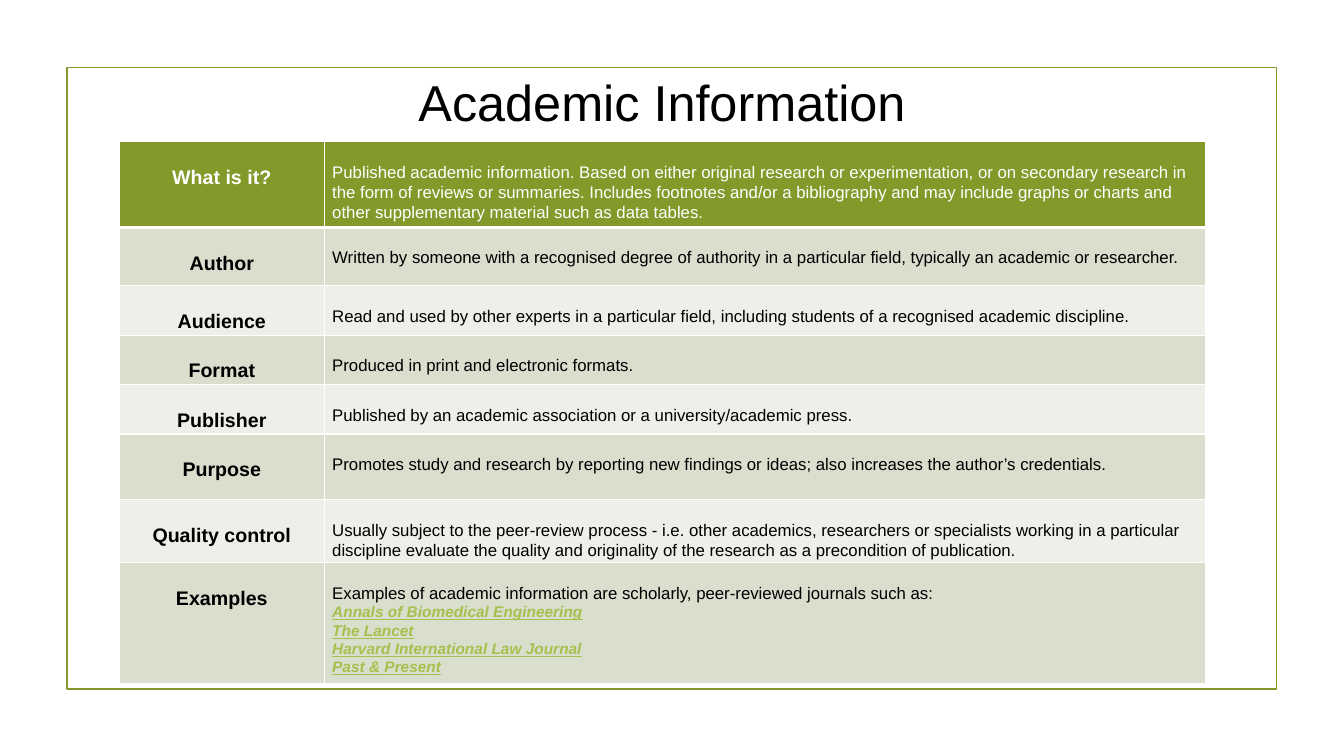
from dataclasses import dataclass

from lxml.etree import SubElement
from pptx import Presentation
from pptx.dml.color import RGBColor
from pptx.enum.shapes import MSO_SHAPE
from pptx.enum.text import MSO_ANCHOR, PP_ALIGN
from pptx.oxml.ns import qn
from pptx.util import Pt


@dataclass(frozen=True)
class Theme:
    font: str = "Arial"
    green: str = "83992A"
    link: str = "A8BF4D"
    bands: tuple = ("EDEFE8", "D9DECD")
    dark: str = "000000"
    light: str = "FFFFFF"
    title: int = 36
    label: int = 14
    body: int = 12
    journal: int = 11


THEME = Theme()

ROWS = [
    (61.2, "What is it?", "Published academic information. Based on either original research or experimentation, or on secondary research in the form of reviews or summaries. Includes footnotes and/or a bibliography and may include graphs or charts and other supplementary material such as data tables."),
    (41.8, "Author", "Written by someone with a recognised degree of authority in a particular field, typically an academic or researcher."),
    (35.3, "Audience", "Read and used by other experts in a particular field, including students of a recognised academic discipline."),
    (35.3, "Format", "Produced in print and electronic formats."),
    (35.3, "Publisher", "Published by an academic association or a university/academic press."),
    (46.8, "Purpose", "Promotes study and research by reporting new findings or ideas; also increases the author’s credentials."),
    (43.9, "Quality control", "Usually subject to the peer-review process - i.e. other academics, researchers or specialists working in a particular discipline evaluate the quality and originality of the research as a precondition of publication."),
    (79.9, "Examples", "Examples of academic information are scholarly, peer-reviewed journals such as:"),
]
JOURNALS = [
    "Annals of Biomedical Engineering",
    "The Lancet",
    "Harvard International Law Journal",
    "Past & Present",
]


def set_attrs(obj, values):
    for name, value in values.items():
        setattr(obj, name, value)


def write(p, text, size, color, align=PP_ALIGN.LEFT, spacing=1.07, **style):
    set_attrs(p, {"alignment": align, "line_spacing": spacing})
    r = p.add_run()
    r.text = text
    set_attrs(r.font, {"name": THEME.font, "size": Pt(size), **style})
    r.font.color.rgb = RGBColor.from_string(color)


def add_frame(s, left, top, width, height):
    sp = s.shapes.add_shape(MSO_SHAPE.RECTANGLE, Pt(left), Pt(top), Pt(width), Pt(height))
    sp.shadow.inherit = False
    sp.fill.background()
    sp.line.color.rgb = RGBColor.from_string(THEME.green)
    sp.line.width = Pt(1.25)


def add_title(s, left, top, width, height):
    sp = s.shapes.add_textbox(Pt(left), Pt(top), Pt(width), Pt(height))
    tf = sp.text_frame
    set_attrs(tf, {"word_wrap": True, "vertical_anchor": MSO_ANCHOR.MIDDLE})
    write(tf.paragraphs[0], "Academic Information", THEME.title, THEME.dark,
          PP_ALIGN.CENTER, 1.0)


def format_cell(cell, fill, top_margin, widths):
    tc_pr = cell._tc.get_or_add_tcPr()
    for side, width in zip("LRTB", widths):
        ln = SubElement(tc_pr, qn(f"a:ln{side}"), w=str(Pt(width)))
        color = SubElement(SubElement(ln, qn("a:solidFill")), qn("a:srgbClr"))
        color.set("val", THEME.light)
    cell.fill.solid()
    cell.fill.fore_color.rgb = RGBColor.from_string(fill)
    set_attrs(cell, {
        "margin_left": Pt(5.4), "margin_right": Pt(5.4),
        "margin_top": Pt(top_margin), "margin_bottom": 0,
        "vertical_anchor": MSO_ANCHOR.TOP,
    })


def add_criteria_table(s, left, top, width, label_width):
    height = sum(row[0] for row in ROWS)
    table = s.shapes.add_table(len(ROWS), 2, Pt(left), Pt(top), Pt(width), Pt(height)).table
    table.columns[0].width = Pt(label_width)
    table.columns[1].width = Pt(width - label_width)
    for i, (row_height, label, body) in enumerate(ROWS):
        table.rows[i].height = Pt(row_height)
        fill = THEME.bands[i % 2] if i else THEME.green
        color = THEME.dark if i else THEME.light
        widths = (1, 1, 3 if i == 1 else 1, 1 if i else 3)
        name_cell, body_cell = table.cell(i, 0), table.cell(i, 1)
        format_cell(name_cell, fill, 16.7, widths)
        format_cell(body_cell, fill, 14.3, widths)
        write(name_cell.text_frame.paragraphs[0], label, THEME.label, color,
              PP_ALIGN.CENTER, bold=True)
        write(body_cell.text_frame.paragraphs[0], body, THEME.body, color, bold=False)
    for journal in JOURNALS:
        write(body_cell.text_frame.add_paragraph(), journal, THEME.journal, THEME.link,
              bold=True, italic=True, underline=True)


def main():
    prs = Presentation()
    set_attrs(prs, {"slide_width": Pt(960), "slide_height": Pt(540)})
    s = prs.slides.add_slide(prs.slide_layouts[6])
    add_frame(s, 47.8, 48.2, 864, 444)
    add_title(s, 95, 43.2, 756, 59)
    add_criteria_table(s, 85, 101.2, 776.2, 146.9)
    prs.save("out.pptx")


if __name__ == "__main__":
    main()
